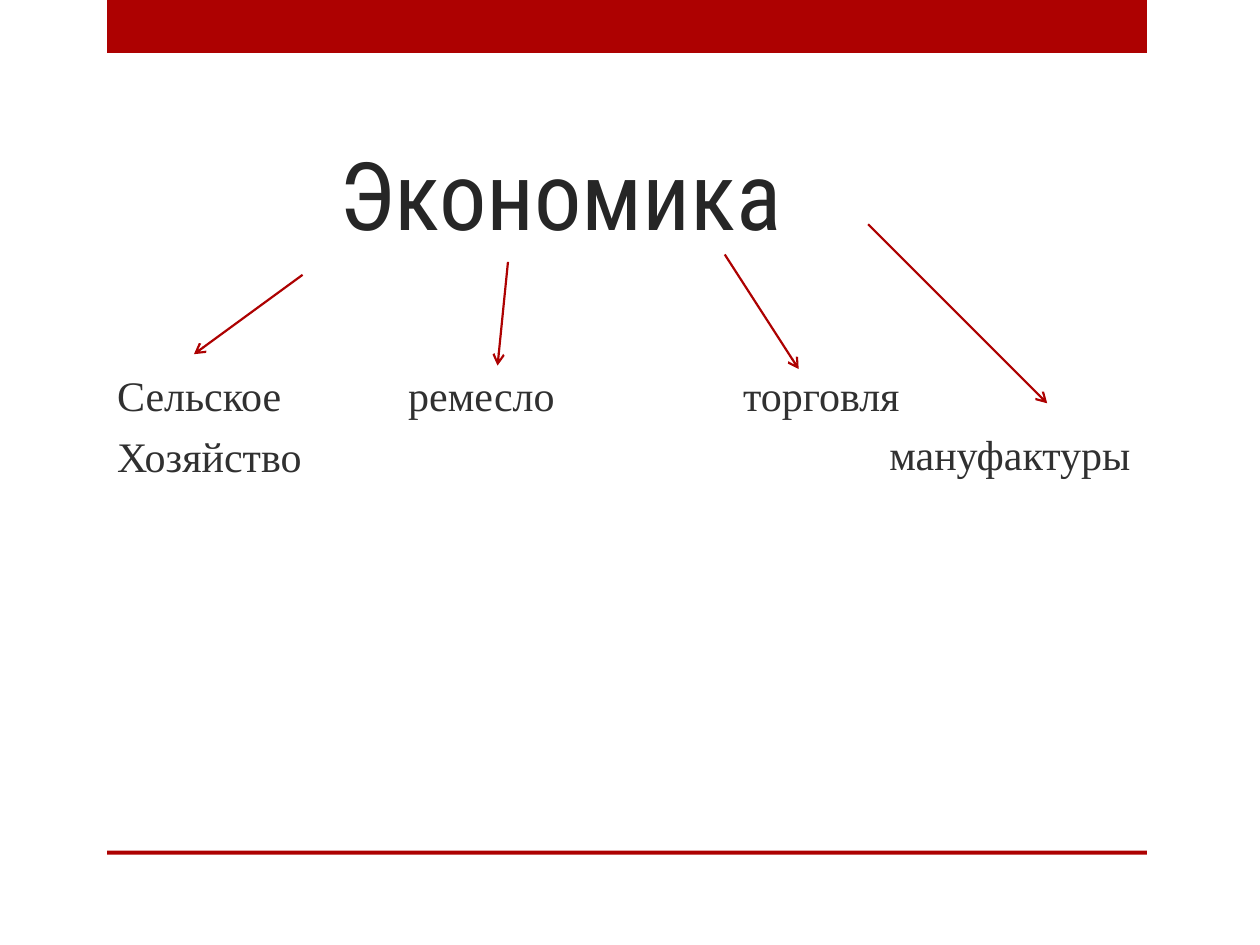
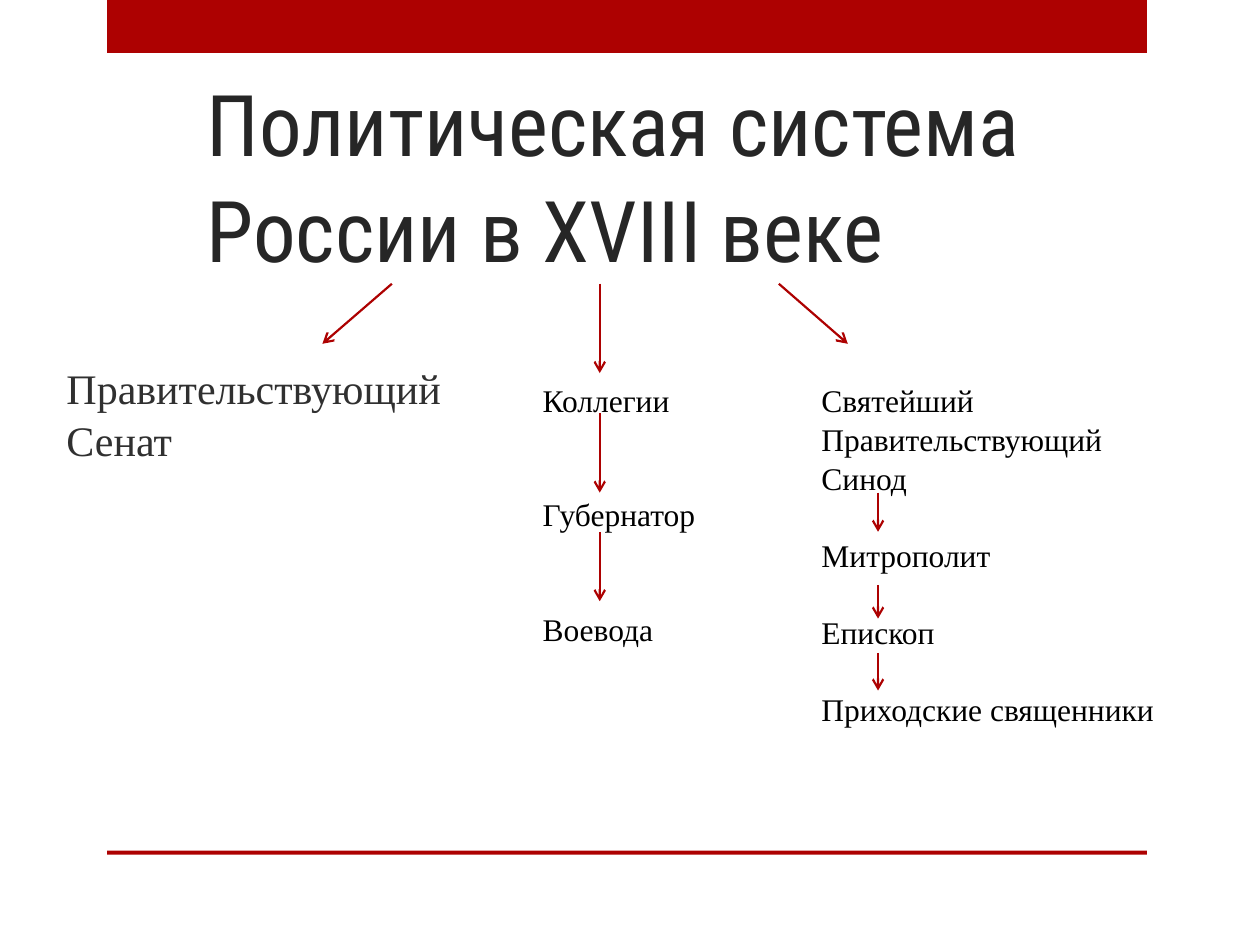
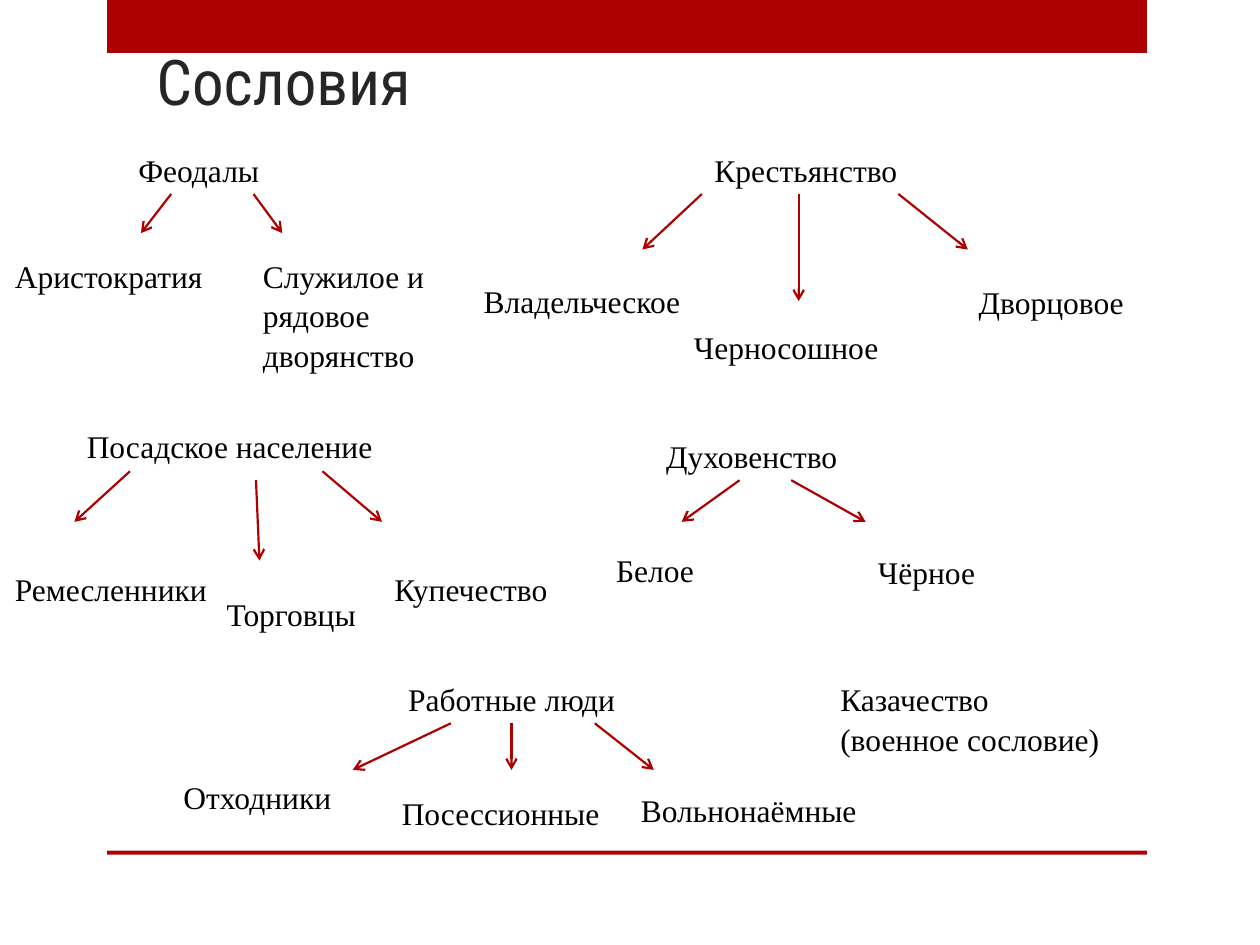
from lxml.etree import SubElement
from pptx import Presentation
from pptx.dml.color import RGBColor
from pptx.enum.shapes import MSO_CONNECTOR, MSO_SHAPE
from pptx.enum.text import MSO_ANCHOR, MSO_AUTO_SIZE, PP_ALIGN
from pptx.oxml.ns import qn
from pptx.util import Cm, Pt

RED = RGBColor(0xAD, 0x01, 0x01)
TITLE_GRAY = RGBColor(0x26, 0x26, 0x26)
BODY_GRAY = RGBColor(0x30, 0x30, 0x30)
BLACK = RGBColor(0, 0, 0)
TITLE_FONT = "Roboto Condensed"
BODY_FONT = "Times New Roman"
LINE_SPACING = 1.04


def write_text(shape, text, size=18, color=BLACK, font=BODY_FONT,
               anchor=MSO_ANCHOR.TOP, space_before=0):
    frame = shape.text_frame
    frame.word_wrap = True
    frame.auto_size = MSO_AUTO_SIZE.NONE
    frame.vertical_anchor = anchor
    frame.text = text
    for paragraph in frame.paragraphs:
        paragraph.alignment = PP_ALIGN.LEFT
        paragraph.line_spacing = LINE_SPACING
        paragraph.space_before = Pt(space_before)
        paragraph.font.size = Pt(size)
        paragraph.font.name = font
        paragraph.font.color.rgb = color
    # The gap belongs between paragraphs, not above the first of several
    if len(frame.paragraphs) > 1:
        frame.paragraphs[0].space_before = Pt(0)


def add_arrow(slide, start_x, start_y, end_x, end_y):
    arrow = slide.shapes.add_connector(
        MSO_CONNECTOR.STRAIGHT, Cm(start_x), Cm(start_y), Cm(end_x), Cm(end_y))
    arrow.line.color.rgb = RED
    arrow.line.width = Pt(1.25)
    SubElement(arrow.line._get_or_add_ln(), qn("a:tailEnd"), type="arrow")
    SubElement(arrow.element.spPr, qn("a:effectLst"))


presentation = Presentation()
presentation.slide_width = Cm(25.4)
presentation.slide_height = Cm(19.05)
layout = presentation.slide_layouts[5]

# Slides and their titles: text, size, left, top, height
titles = [
    ("Экономика", 54, 6.58, 0.71, 4.45),
    ("Политическая система России в XVIII веке", 48.6, 3.91, 1.32, 4.45),
    ("Сословия", 36, 2.9, 1.32, 1.19),
]
for text, size, left, top, height in titles:
    title = presentation.slides.add_slide(layout).shapes.title
    title.left, title.top = Cm(left), Cm(top)
    title.width, title.height = Cm(18.85), Cm(height)
    write_text(title, text, size=size, color=TITLE_GRAY, font=TITLE_FONT,
               anchor=MSO_ANCHOR.BOTTOM)
economy, politics, estates = presentation.slides

# Red bands, moved to the layout that all slides share
for number, (top, height) in enumerate([(0, 1.07), (17.15, 0.08)]):
    band = economy.shapes.add_shape(
        MSO_SHAPE.RECTANGLE, Cm(2.16), Cm(top), Cm(20.96), Cm(height))
    band.shadow.inherit = False
    band.fill.solid()
    band.fill.fore_color.rgb = RED
    band.line.fill.background()
    band.element.nvSpPr.cNvPr.set("id", str(100 + number))
    layout.shapes.element.append(band.element)

# Economy: branches
branches = [
    ("Сельское\nХозяйство", 2.11, 7.29, 2.6),
    ("ремесло", 7.98, 7.29, 1.3),
    ("торговля", 14.73, 7.29, 1.3),
    ("мануфактуры", 17.68, 8.48, 1.3),
]
for text, left, top, height in branches:
    box = economy.shapes.add_textbox(Cm(left), Cm(top), Cm(5.6), Cm(height))
    write_text(box, text, size=24, color=BODY_GRAY,
               space_before=5 if "\n" in text else 0)

for ends in [(6.1, 5.54, 3.91, 7.14), (10.24, 5.28, 10.03, 7.37),
             (14.61, 5.13, 16.1, 7.44), (17.5, 4.52, 21.11, 8.13)]:
    add_arrow(economy, *ends)

# Politics: the Senate and two chains of authority
senate = politics.shapes.add_textbox(Cm(1.09), Cm(5.92), Cm(8.61), Cm(4.8))
write_text(senate, "Правительствующий Сенат", size=24, color=BODY_GRAY,
           anchor=MSO_ANCHOR.MIDDLE, space_before=5)

chains = [
    ("Коллегии\nГубернатор\nВоевода", 10.69, 5.59, 5.64, 43),
    ("Святейший Правительствующий Синод\nМитрополит\nЕпископ\n"
     "Приходские священники", 16.31, 7.59, 7.19, 21.5),
]
for text, left, width, height, gap in chains:
    box = politics.shapes.add_textbox(Cm(left), Cm(7.52), Cm(width), Cm(height))
    write_text(box, text, space_before=gap)

for ends in [(7.9, 5.72, 6.5, 6.93), (15.7, 5.72, 17.09, 6.93)]:
    add_arrow(politics, *ends)
vertical_arrows = {
    12.09: [(5.72, 7.52), (8.33, 9.93), (10.72, 12.12)],
    17.7: [(9.93, 10.72), (11.79, 12.47), (13.16, 13.92)],
}
for x, spans in vertical_arrows.items():
    for start_y, end_y in spans:
        add_arrow(politics, x, start_y, x, end_y)

# Estates: text, left, top, width, lines
estate_labels = [
    ("Феодалы", 2.54, 2.9, 3.61, 1),
    ("Аристократия", 0.05, 5.03, 5.11, 1),
    ("Служилое и рядовое дворянство", 5.05, 5.03, 3.81, 3),
    ("Крестьянство", 14.15, 2.9, 6.6, 1),
    ("Владельческое", 9.5, 5.54, 4.65, 1),
    ("Черносошное", 13.74, 6.45, 5, 1),
    ("Дворцовое", 19.48, 5.56, 4.19, 1),
    ("Посадское население", 1.5, 8.46, 6.6, 1),
    ("Ремесленники", 0.05, 11.33, 4.72, 1),
    ("Торговцы", 4.32, 11.84, 3.66, 1),
    ("Купечество", 7.7, 11.33, 4.11, 1),
    ("Духовенство", 13.18, 8.66, 5.56, 1),
    ("Белое", 12.17, 10.95, 3.94, 1),
    ("Чёрное", 17.45, 11, 3.3, 1),
    ("Работные люди", 7.98, 13.56, 6.02, 1),
    ("Отходники", 3.45, 15.52, 5.05, 1),
    ("Посессионные", 7.85, 15.85, 5.33, 1),
    ("Вольнонаёмные", 12.67, 15.8, 5.56, 1),
    ("Казачество (военное сословие)", 16.69, 13.56, 5.99, 2),
]
for text, left, top, width, lines in estate_labels:
    box = estates.shapes.add_textbox(
        Cm(left), Cm(top), Cm(width), Cm(0.25 + 0.77 * lines))
    write_text(box, text)

estate_arrows = [
    # Feudal lords
    (3.45, 3.91, 2.84, 4.7), (5.11, 3.91, 5.69, 4.7),
    # Peasants
    (14.15, 3.91, 12.95, 5.03), (16.1, 3.91, 16.1, 6.07),
    (18.11, 3.91, 19.51, 5.03),
    # Townspeople
    (2.62, 9.5, 1.5, 10.52), (5.16, 9.68, 5.23, 11.3), (6.5, 9.5, 7.7, 10.52),
    # Clergy
    (14.91, 9.68, 13.74, 10.52), (15.95, 9.68, 17.45, 10.52),
    # Workers
    (9.09, 14.58, 7.11, 15.52), (10.31, 14.58, 10.31, 15.52),
    (11.99, 14.58, 13.18, 15.52),
]
for ends in estate_arrows:
    add_arrow(estates, *ends)

presentation.save("out.pptx")
